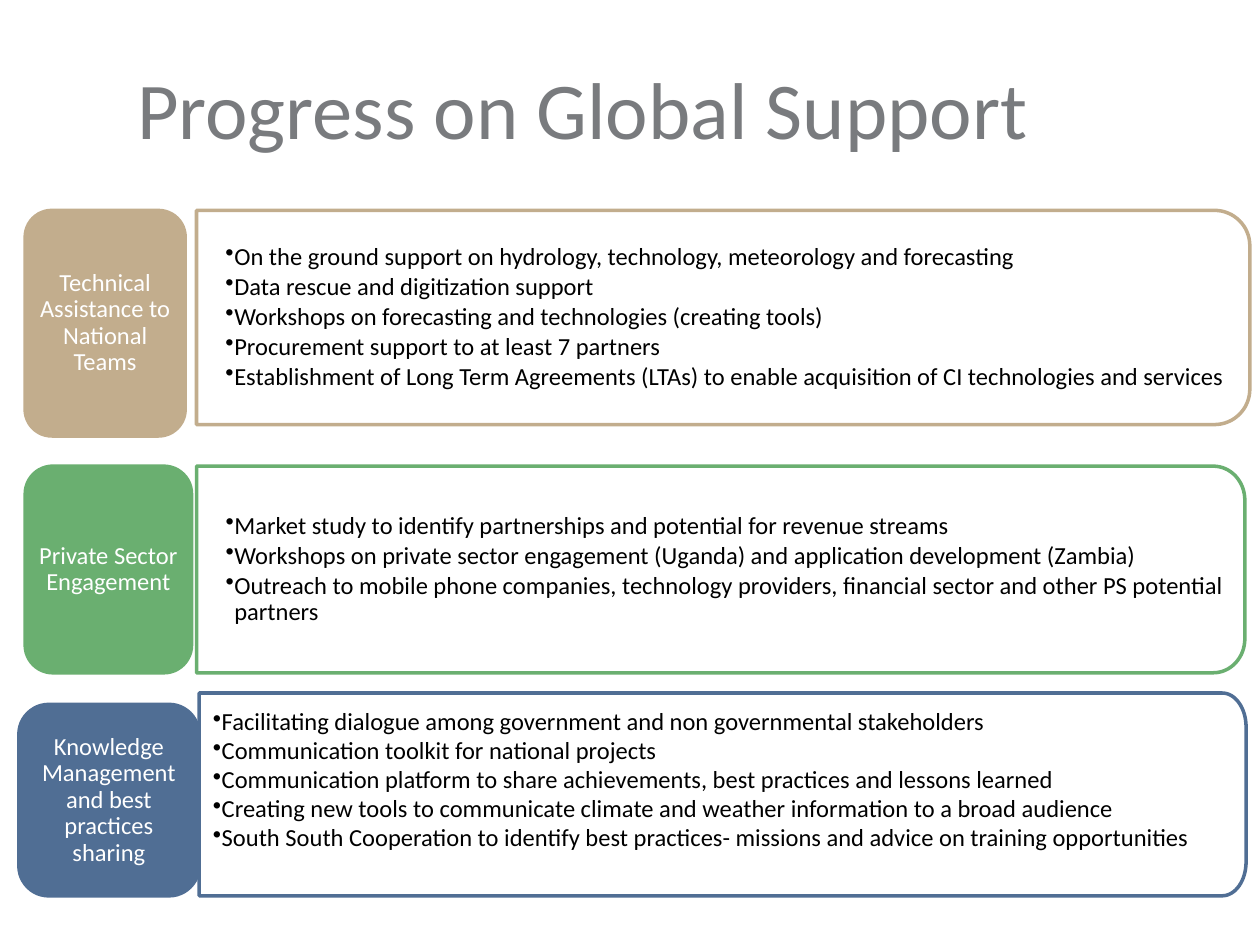
from math import cos, pi, sin

from lxml import etree
from pptx import Presentation
from pptx.dml.color import RGBColor
from pptx.enum.shapes import MSO_SHAPE as Shape
from pptx.enum.text import MSO_ANCHOR as Anchor, PP_ALIGN as Align
from pptx.oxml.ns import qn
from pptx.util import Inches, Pt

COLORS = {"title": "797B7E", "white": "FFFFFF", "black": "000000",
          "tan": "C2AD8D", "green": "6AAF70", "blue": "506E94"}
FONT = "Calibri"
TITLE = "Progress on Global Support"

# Boxes are left, top, width, height; corner is the x and y radius of the panel's
# right corners. Insets are left, top, right, bottom.
SPACED = {"margin": 0.19, "line": 0.9, "after": 2}
TIGHT = {"margin": 0.07, "line": 0.98, "after": 0}
SECTIONS = [
    {"color": "tan", "label": "Technical Assistance to National Teams",
     "label_box": (0.2, 1.67, 1.27, 1.79), "panel_box": (1.56, 1.67, 8.36, 1.7),
     "corner": (0.28, 0.28), "insets": (0.11, 0.09, 0.09, 0.09), "spacing": SPACED,
     "points": [
         "On the ground support on hydrology, technology, meteorology and forecasting",
         "Data rescue and digitization support",
         "Workshops on forecasting and technologies (creating tools)",
         "Procurement support to at least 7 partners",
         "Establishment of Long Term Agreements (LTAs) to enable acquisition of "
         "CI technologies and services"]},
    {"color": "green", "label": "Private Sector Engagement",
     "label_box": (0.2, 3.7, 1.32, 1.64), "panel_box": (1.56, 3.7, 8.32, 1.64),
     "corner": (0.25, 0.27), "insets": (0.11, 0.08, 0.08, 0.08), "spacing": SPACED,
     "points": [
         "Market study to identify partnerships and potential for revenue streams",
         "Workshops on private sector engagement (Uganda) and application "
         "development (Zambia)",
         "Outreach to mobile phone companies, technology providers, financial sector "
         "and other PS potential partners"]},
    {"color": "blue", "label": "Knowledge Management and best practices sharing",
     "label_box": (0.15, 5.59, 1.43, 1.52), "panel_box": (1.58, 5.5, 8.31, 1.61),
     "corner": (0.19, 0.27), "insets": (0.11, 0.07, 0.07, 0.3), "spacing": TIGHT,
     "points": [
         "Facilitating dialogue among government and non governmental stakeholders",
         "Communication toolkit for national projects",
         "Communication platform to share achievements, best practices and lessons learned",
         "Creating new tools to communicate climate and weather information to a "
         "broad audience",
         "South South Cooperation to identify best practices- missions and advice on "
         "training opportunities"]},
]
HANGING = 0.07
ARC_STEPS = 16


def rgb(name):
    return RGBColor.from_string(COLORS[name])


def set_font(paragraph, size, color):
    paragraph.font.size = Pt(size)
    paragraph.font.name = FONT
    paragraph.font.color.rgb = rgb(color)


def set_frame(frame, insets):
    frame.word_wrap = True
    frame.vertical_anchor = Anchor.MIDDLE
    (frame.margin_left, frame.margin_top,
     frame.margin_right, frame.margin_bottom) = map(Inches, insets)


def paint(shape, fill, line):
    shape.shadow.inherit = False
    shape.fill.solid()
    shape.fill.fore_color.rgb = rgb(fill)
    shape.line.color.rgb = rgb(line)
    shape.line.width = Pt(2)


def add_bullet(paragraph, margin):
    properties = paragraph._p.get_or_add_pPr()
    properties.set("marL", str(Inches(margin)))
    properties.set("indent", str(-Inches(HANGING)))
    etree.SubElement(properties, qn("a:buChar")).set("char", "•")


def add_title(slide):
    title = slide.shapes.add_textbox(*map(Inches, (0.6, 0.12, 8.04, 1.46)))
    frame = title.text_frame
    set_frame(frame, (0.1, 0.05, 0.1, 0.05))
    frame.text = TITLE
    frame.paragraphs[0].alignment = Align.CENTER
    set_font(frame.paragraphs[0], 46, "title")


def add_label(slide, section):
    label = slide.shapes.add_shape(Shape.ROUNDED_RECTANGLE,
                                   *map(Inches, section["label_box"]))
    paint(label, section["color"], section["color"])
    frame = label.text_frame
    set_frame(frame, (0.01, 0.01, 0.01, 0.01))
    frame.text = section["label"]
    paragraph = frame.paragraphs[0]
    paragraph.alignment = Align.CENTER
    paragraph.line_spacing = 0.9
    set_font(paragraph, 14, "white")


def panel_outline(box, corner):
    """Points of a rectangle whose two right corners are rounded."""
    left, top, width, height = box
    rx, ry = corner
    right, bottom = left + width, top + height
    angles = [pi / 2 * step / ARC_STEPS for step in range(ARC_STEPS + 1)]
    upper = [(right - rx + rx * sin(a), top + ry - ry * cos(a)) for a in angles]
    lower = [(x, top + bottom - y) for x, y in reversed(upper)]
    outline = [(left, top), *upper, *lower, (left, bottom)]
    return [(Inches(x), Inches(y)) for x, y in outline]


def add_panel(slide, section):
    start, *rest = panel_outline(section["panel_box"], section["corner"])
    builder = slide.shapes.build_freeform(*start)
    builder.add_line_segments(rest, close=True)
    panel = builder.convert_to_shape()
    paint(panel, "white", section["color"])
    color = panel.fill._xPr.find(qn("a:solidFill"))[0]
    etree.SubElement(color, qn("a:alpha")).set("val", "90000")

    frame = panel.text_frame
    set_frame(frame, section["insets"])
    frame.text = "\n".join(section["points"])
    spacing = section["spacing"]
    for paragraph in frame.paragraphs:
        add_bullet(paragraph, spacing["margin"])
        paragraph.alignment = Align.LEFT
        paragraph.line_spacing = spacing["line"]
        paragraph.space_after = Pt(spacing["after"])
        set_font(paragraph, 14, "black")


def main():
    deck = Presentation()
    deck.slide_width, deck.slide_height = Inches(10), Inches(7.5)
    slide = deck.slides.add_slide(deck.slide_layouts[6])
    add_title(slide)
    for section in SECTIONS:
        add_label(slide, section)
        add_panel(slide, section)
    deck.save("out.pptx")


if __name__ == "__main__":
    main()
